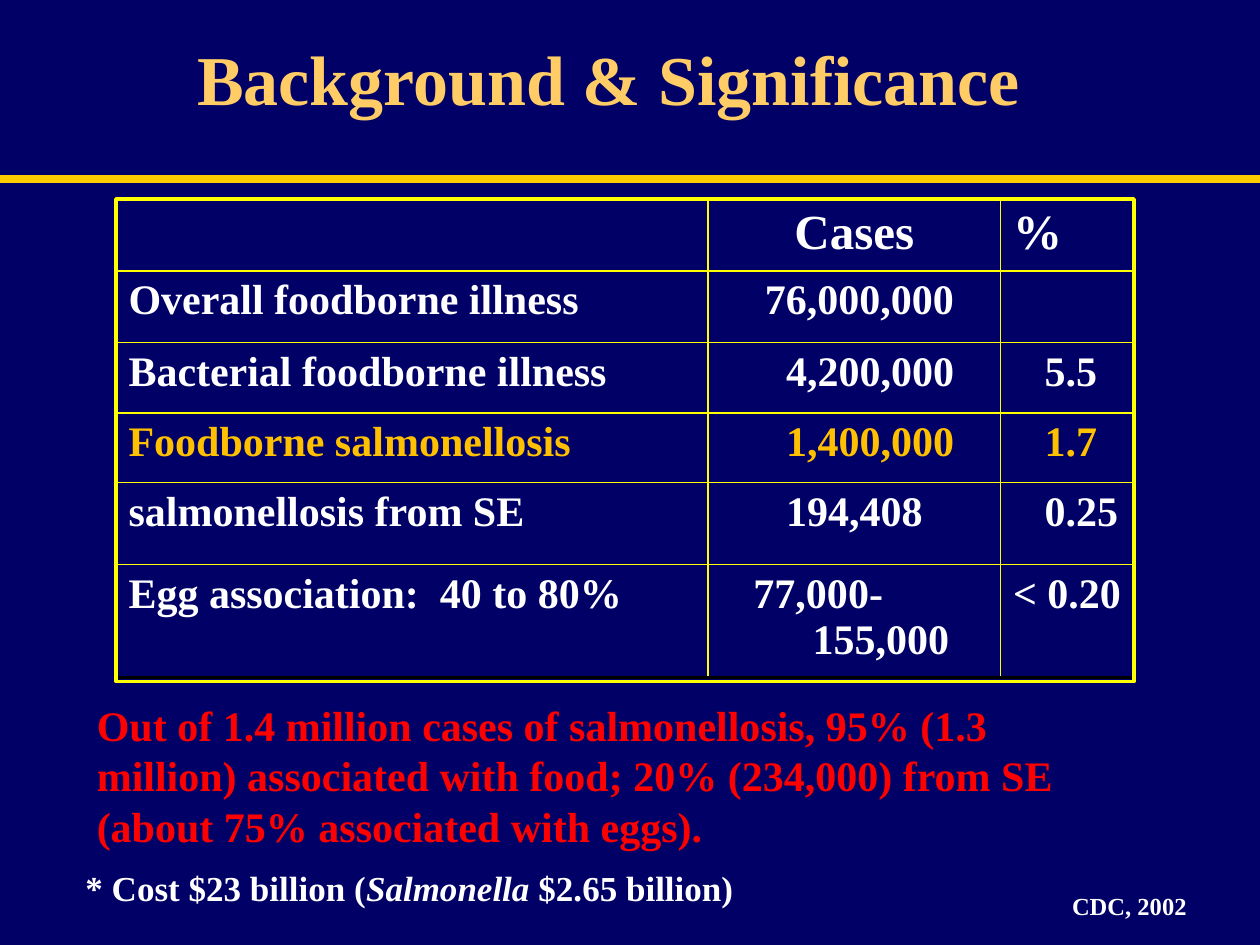
from lxml import etree
from pptx import Presentation
from pptx.dml.color import RGBColor
from pptx.enum.shapes import MSO_CONNECTOR, MSO_SHAPE
from pptx.enum.text import MSO_ANCHOR, PP_ALIGN
from pptx.oxml.ns import qn
from pptx.util import Inches, Pt

STRAIGHT, RECTANGLE = MSO_CONNECTOR.STRAIGHT, MSO_SHAPE.RECTANGLE
TOP, BOTTOM = MSO_ANCHOR.TOP, MSO_ANCHOR.BOTTOM
LEFT, CENTER = PP_ALIGN.LEFT, PP_ALIGN.CENTER

FONT = "Times New Roman"
NAVY, WHITE, BLACK, YELLOW = "000066", "FFFFFF", "000000", "FFFF00"
GOLD, RULE_GOLD, TITLE_GOLD, RED = "FFC000", "FFCC00", "FFCC66", "FF0000"

# A cell is (text, left inset in inches).
TABLE_ROWS = [
    [("", 0.1), ("Cases", 0.1), ("%", 0.1)],
    [("Overall foodborne illness", 0.1), ("76,000,000", 0.45), ("", 0.1)],
    [("Bacterial foodborne illness", 0.1), ("4,200,000", 0.62), ("5.5", 0.35)],
    [("Foodborne salmonellosis", 0.1), ("1,400,000", 0.62), ("1.7", 0.35)],
    [("salmonellosis from SE", 0.1), ("194,408", 0.62), ("0.25", 0.35)],
    [("Egg association:  40 to 80%", 0.1), ("77,000-\v155,000", 0.36), ("< 0.20", 0.1)],
]
HIGHLIGHT_ROW = 3
HANGING_INDENT = 0.47  # second line of the egg range
COLUMN_WIDTHS = [4.7, 2.32, 1.06]
ROW_HEIGHTS = [0.57, 0.57, 0.56, 0.55, 0.65, 0.9]
TABLE_LEFT, TABLE_TOP = 0.92, 1.58

# (runs, (left, top, width, height), size, colour, alignment, anchor, wrap); a run is (text, italic)
TEXTS = [
    ([("Background & Significance", False)],
     (0.58, 0.17, 8.5, 0.83), 40, TITLE_GOLD, CENTER, BOTTOM, True),
    ([("CDC, 2002", False)],
     (8.41, 7.02, 1.12, 0.34), 14, WHITE, LEFT, TOP, False),
    ([("Out of 1.4 million cases of salmonellosis, 95% (1.3 million) associated with food; "
       "20% (234,000) from SE (about 75% associated with eggs).", False)],
     (0.67, 5.5, 8, 1.31), 24, RED, LEFT, TOP, True),
    ([("* Cost $23 billion (", False), ("Salmonella ", True), ("$2.65 billion)", False)],
     (0.58, 6.83, 5.39, 0.43), 20, WHITE, LEFT, TOP, False),
]


def color(hex_code):
    return RGBColor.from_string(hex_code)


def style(para, size, hex_code, alignment=LEFT):
    para.alignment = alignment
    para.font.name, para.font.size, para.font.bold = FONT, Pt(size), True
    para.font.color.rgb = color(hex_code)


def add_text(page, runs, place, size, hex_code, alignment, anchor, wrap):
    frame = page.shapes.add_textbox(*map(Inches, place)).text_frame
    frame.word_wrap, frame.vertical_anchor = wrap, anchor
    para = frame.paragraphs[0]
    style(para, size, hex_code, alignment)
    for text, italic in runs:
        span = para.add_run()
        span.text = text
        if italic:
            span.font.italic = True


def set_borders(cell, outer_sides):
    """Draw thick black lines on the outer sides and thin yellow ones elsewhere."""
    properties = cell._tc.get_or_add_tcPr()
    for position, side in enumerate("LRTB"):
        hex_code, width = (BLACK, 2.25) if side in outer_sides else (YELLOW, 1)
        line = etree.Element(qn(f"a:ln{side}"), w=str(Pt(width)))
        fill = etree.SubElement(line, qn("a:solidFill"))
        etree.SubElement(fill, qn("a:srgbClr"), val=hex_code)
        properties.insert(position, line)


def add_case_table(page):
    last_row, last_column = len(ROW_HEIGHTS) - 1, len(COLUMN_WIDTHS) - 1
    size = (sum(COLUMN_WIDTHS), sum(ROW_HEIGHTS))
    table = page.shapes.add_table(last_row + 1, last_column + 1,
                                  *map(Inches, (TABLE_LEFT, TABLE_TOP, *size))).table
    table.first_row = table.horz_banding = False
    for column, width in zip(table.columns, COLUMN_WIDTHS):
        column.width = Inches(width)
    for r, (height, entries) in enumerate(zip(ROW_HEIGHTS, TABLE_ROWS)):
        table.rows[r].height = Inches(height)
        for c, (text, inset) in enumerate(entries):
            cell = table.cell(r, c)
            cell.fill.background()
            cell.margin_left = Inches(inset)
            cell.text = text
            para = cell.text_frame.paragraphs[0]
            style(para, 28 if r == 0 else 24, GOLD if r == HIGHLIGHT_ROW else WHITE,
                  CENTER if r == 0 and c == 1 else LEFT)
            if "\v" in text:
                indent = Inches(HANGING_INDENT)
                properties = para._p.get_or_add_pPr()
                properties.set("marL", str(indent))
                properties.set("indent", str(-indent))
            edges = {"L": c == 0, "R": c == last_column, "T": r == 0, "B": r == last_row}
            set_borders(cell, [side for side, is_outer in edges.items() if is_outer])


def main():
    deck = Presentation()
    deck.slide_width, deck.slide_height = Inches(10), Inches(7.5)
    page = deck.slides.add_slide(deck.slide_layouts[6])
    page.background.fill.solid()
    page.background.fill.fore_color.rgb = color(NAVY)

    rule = page.shapes.add_connector(STRAIGHT, 0, Inches(1.42), Inches(10), Inches(1.42))
    rule.line.color.rgb, rule.line.width = color(RULE_GOLD), Pt(4.5)
    etree.SubElement(rule._element.spPr, qn("a:effectLst"))

    add_case_table(page)
    for text in TEXTS:
        add_text(page, *text)

    frame = page.shapes.add_shape(
        RECTANGLE, *map(Inches, (TABLE_LEFT, TABLE_TOP, sum(COLUMN_WIDTHS), 3.83)))
    frame.shadow.inherit = False
    frame.fill.background()
    frame.line.color.rgb, frame.line.width = color(YELLOW), Pt(2)

    deck.save("out.pptx")


if __name__ == "__main__":
    main()
